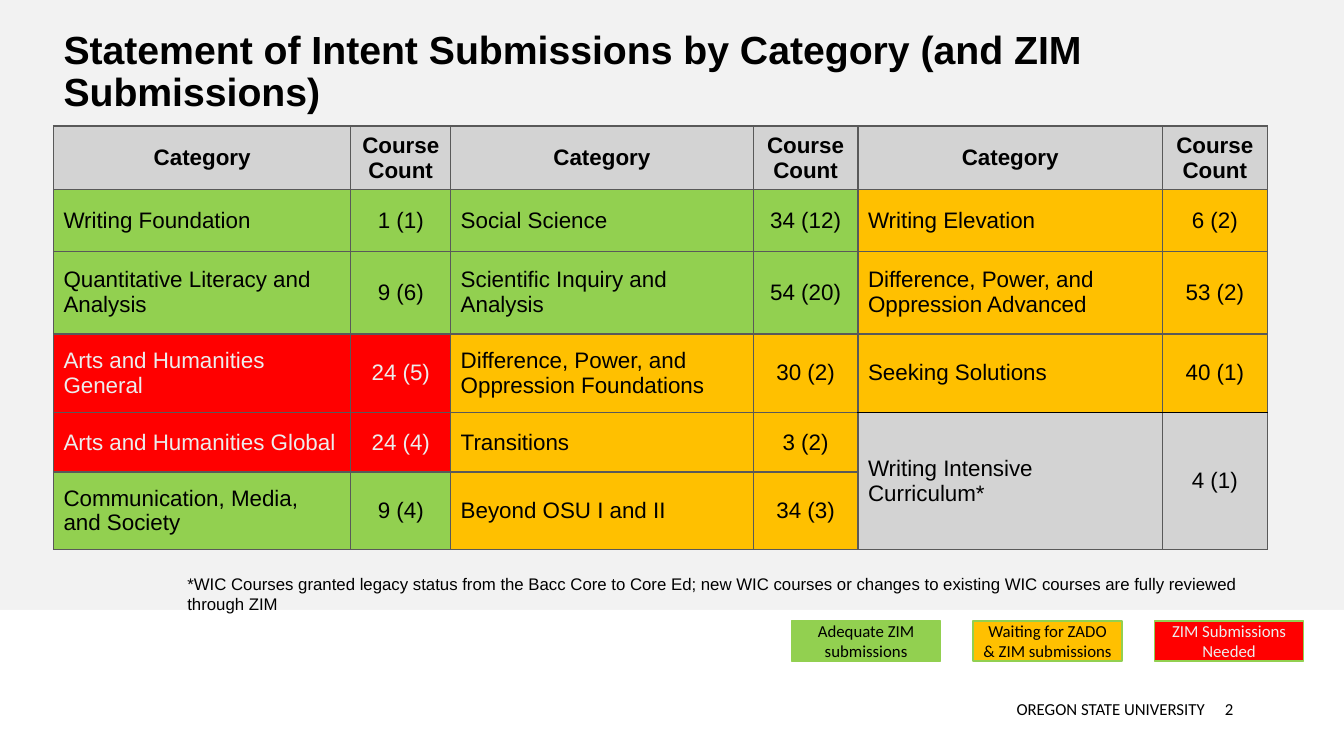
"""Build the slide of intent submissions by category, with its status legend."""
import dataclasses
import typing

import lxml.etree
import pptx
import pptx.dml.color
import pptx.enum.shapes
import pptx.enum.text
import pptx.oxml.ns
import pptx.util

Inches = pptx.util.Inches
Align = pptx.enum.text.PP_ALIGN
Anchor = pptx.enum.text.MSO_ANCHOR
AutoSize = pptx.enum.text.MSO_AUTO_SIZE


@dataclasses.dataclass(frozen=True)
class Theme:
    background: str = "F2F2F2"
    white: str = "FFFFFF"
    ink: str = "000000"
    pale_ink: str = "EDEDED"
    border: str = "595959"
    neutral: str = "D3D3D3"
    adequate: str = "92D050"
    waiting: str = "FFC000"
    needed: str = "FF0000"
    main_font: str = "Arial"
    small_font: str = "Calibri"
    title_size: int = 28
    table_size: int = 16
    small_size: int = 12


THEME = Theme()


@dataclasses.dataclass(frozen=True)
class Status:
    fill: str
    ink: str = THEME.ink
    label: str = ""


@dataclasses.dataclass(frozen=True)
class Category:
    name: str
    count: str
    status: Status


ADEQUATE = Status(THEME.adequate, label="Adequate ZIM submissions")
WAITING = Status(THEME.waiting, label="Waiting for ZADO & ZIM submissions")
NEEDED = Status(THEME.needed, THEME.pale_ink, "ZIM Submissions Needed")
NEUTRAL = Status(THEME.neutral)

CATEGORY_GROUPS = [
    [
        Category("Writing Foundation", "1 (1)", ADEQUATE),
        Category("Quantitative Literacy and Analysis", "9 (6)", ADEQUATE),
        Category("Arts and Humanities General", "24 (5)", NEEDED),
        Category("Arts and Humanities Global", "24 (4)", NEEDED),
        Category("Communication, Media, and Society", "9 (4)", ADEQUATE),
    ],
    [
        Category("Social Science", "34 (12)", ADEQUATE),
        Category("Scientific Inquiry and Analysis", "54 (20)", ADEQUATE),
        Category("Difference, Power, and Oppression Foundations", "30 (2)", WAITING),
        Category("Transitions", "3 (2)", WAITING),
        Category("Beyond OSU I and II", "34 (3)", WAITING),
    ],
    [
        Category("Writing Elevation", "6 (2)", WAITING),
        Category("Difference, Power, and Oppression Advanced", "53 (2)", WAITING),
        Category("Seeking Solutions", "40 (1)", WAITING),
        Category("Writing Intensive Curriculum*", "4 (1)", NEUTRAL),
    ],
]
COLUMN_WIDTHS = [2.95, 0.99, 3, 1.04, 3.02, 1.04]
ROW_HEIGHTS = [0.61, 0.61, 0.82, 0.78, 0.59, 0.77]
MERGED_ROW = 4
MERGED_COLUMNS = (4, 5)


def rgb(color: str) -> pptx.dml.color.RGBColor:
    return pptx.dml.color.RGBColor.from_string(color)


def write_text(frame: typing.Any, text: str, *, size: int, font: str = THEME.main_font,
               color: str = THEME.ink, bold: bool = False, align: Align = Align.LEFT,
               spacing: float = 1.0) -> None:
    frame.word_wrap = True
    para = frame.paragraphs[0]
    para.alignment = align
    para.line_spacing = spacing
    span = para.add_run()
    span.text = text
    span.font.size = pptx.util.Pt(size)
    span.font.name = font
    span.font.bold = bold
    span.font.color.rgb = rgb(color)


def add_rectangle(page: typing.Any, left: float, top: float, width: float, height: float,
                  fill: str, line: str | None = None) -> typing.Any:
    box = page.shapes.add_shape(pptx.enum.shapes.MSO_SHAPE.RECTANGLE,
                                Inches(left), Inches(top), Inches(width), Inches(height))
    box.shadow.inherit = False
    box.fill.solid()
    box.fill.fore_color.rgb = rgb(fill)
    if line:
        box.line.color.rgb = rgb(line)
        box.line.width = pptx.util.Pt(1)
    else:
        box.line.fill.background()
    return box


def add_text_frame(page: typing.Any, left: float, top: float, width: float,
                   height: float) -> typing.Any:
    box = page.shapes.add_textbox(Inches(left), Inches(top), Inches(width), Inches(height))
    return box.text_frame


def set_borders(cell: typing.Any, top: str, bottom: str) -> None:
    properties = cell._tc.get_or_add_tcPr()
    sides = {"lnL": THEME.border, "lnR": THEME.border, "lnT": top, "lnB": bottom}
    for side, color in sides.items():
        edge = lxml.etree.SubElement(properties, pptx.oxml.ns.qn(f"a:{side}"),
                                     w=str(pptx.util.Pt(1)))
        fill = lxml.etree.SubElement(edge, pptx.oxml.ns.qn("a:solidFill"))
        lxml.etree.SubElement(fill, pptx.oxml.ns.qn("a:srgbClr"), val=color)


def write_cell(cell: typing.Any, text: str, status: Status, *, bold: bool = False,
               align: Align = Align.LEFT) -> None:
    cell.vertical_anchor = Anchor.MIDDLE
    cell.fill.solid()
    cell.fill.fore_color.rgb = rgb(status.fill)
    write_text(cell.text_frame, text, size=THEME.table_size, color=status.ink,
               bold=bold, align=align)


def add_category_table(page: typing.Any) -> None:
    table = page.shapes.add_table(len(ROW_HEIGHTS), len(COLUMN_WIDTHS), Inches(0.53),
                                  Inches(1.25), Inches(sum(COLUMN_WIDTHS)),
                                  Inches(sum(ROW_HEIGHTS))).table
    table.first_row = table.horz_banding = False
    for column, width in zip(table.columns, COLUMN_WIDTHS):
        column.width = Inches(width)
    for row, height in zip(table.rows, ROW_HEIGHTS):
        row.height = Inches(height)
    for row in range(len(ROW_HEIGHTS)):
        for column in range(len(COLUMN_WIDTHS)):
            merged = column in MERGED_COLUMNS
            top = THEME.ink if merged and row == MERGED_ROW else THEME.border
            bottom = THEME.ink if merged and row == MERGED_ROW - 1 else THEME.border
            set_borders(table.cell(row, column), top, bottom)
    for column in MERGED_COLUMNS:
        table.cell(MERGED_ROW, column).merge(table.cell(MERGED_ROW + 1, column))
    for group, categories in enumerate(CATEGORY_GROUPS):
        left = 2 * group
        for offset, heading in enumerate(("Category", "Course Count")):
            write_cell(table.cell(0, left + offset), heading, NEUTRAL, bold=True,
                       align=Align.CENTER)
        for row, category in enumerate(categories, start=1):
            write_cell(table.cell(row, left), category.name, category.status)
            write_cell(table.cell(row, left + 1), category.count, category.status,
                       align=Align.CENTER)


def add_title(page: typing.Any) -> None:
    title = page.shapes.title
    title.left, title.top = Inches(0.53), Inches(0)
    title.width, title.height = Inches(12.29), Inches(1.45)
    title.text_frame.auto_size = AutoSize.NONE
    title.text_frame.vertical_anchor = Anchor.MIDDLE
    write_text(title.text_frame,
               "Statement of Intent Submissions by Category (and ZIM Submissions)",
               size=THEME.title_size, bold=True, spacing=0.9)


def add_footer(page: typing.Any) -> None:
    for text, left, width, align in (("OREGON STATE UNIVERSITY", 4.74, 7.31, Align.RIGHT),
                                     ("2", 12.05, 0.69, Align.LEFT)):
        frame = add_text_frame(page, left, 6.83, width, 0.4)
        frame.vertical_anchor = Anchor.MIDDLE
        write_text(frame, text, size=THEME.small_size, font=THEME.small_font, align=align)


def add_legend(page: typing.Any) -> None:
    for index, status in enumerate((ADEQUATE, WAITING, NEEDED)):
        box = add_rectangle(page, 7.85 + 1.8 * index, 6.16, 1.48, 0.4, status.fill,
                            THEME.adequate)
        box.text_frame.vertical_anchor = Anchor.MIDDLE
        write_text(box.text_frame, status.label, size=THEME.small_size,
                   font=THEME.small_font, color=status.ink, align=Align.CENTER)


def main() -> None:
    deck = pptx.Presentation()
    deck.slide_width, deck.slide_height = Inches(13.33), Inches(7.5)
    page = deck.slides.add_slide(deck.slide_layouts.get_by_name("Title Only"))
    page.background.fill.solid()
    page.background.fill.fore_color.rgb = rgb(THEME.background)
    add_rectangle(page, 0, 6.05, 13.33, 1.45, THEME.white)
    add_footer(page)
    add_title(page)
    add_category_table(page)
    note = add_text_frame(page, 1.76, 5.64, 10.94, 0.3)
    note.auto_size = AutoSize.SHAPE_TO_FIT_TEXT
    write_text(note, "*WIC Courses granted legacy status from the Bacc Core to Core Ed; "
               "new WIC courses or changes to existing WIC courses are fully reviewed "
               "through ZIM", size=THEME.small_size)
    add_legend(page)
    deck.save("out.pptx")


if __name__ == "__main__":
    main()
